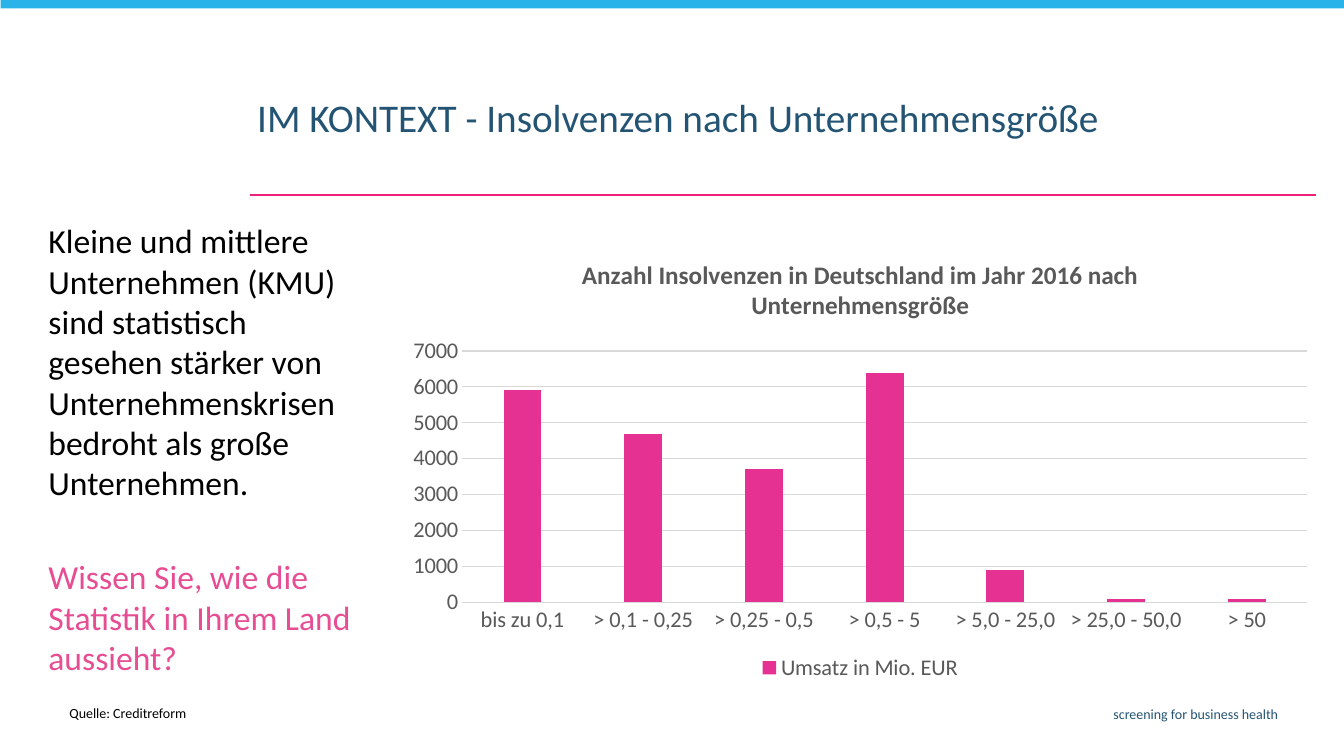
from pptx import Presentation
from pptx.chart.data import CategoryChartData as Data
from pptx.dml.color import RGBColor as Rgb
from pptx.enum.chart import XL_CHART_TYPE as Kind, XL_LEGEND_POSITION as Place
from pptx.enum.chart import XL_TICK_MARK as Tick
from pptx.enum.shapes import MSO_CONNECTOR as Wire, MSO_SHAPE as Form
from pptx.enum.text import MSO_ANCHOR as Anchor, MSO_AUTO_SIZE as Fit, PP_ALIGN as Align
from pptx.oxml.ns import qn
from pptx.util import Pt
from lxml.etree import SubElement as Sub

BLUE, SKY, PINK, GREY, PALE = "245473", "29B3E8", "E53292", "595959", "D9D9D9"
TITLE = "IM KONTEXT - Insolvenzen nach Unternehmensgröße"
THESIS = ("Kleine und mittlere Unternehmen (KMU) sind statistisch gesehen "
          "stärker von Unternehmenskrisen bedroht als große Unternehmen.")
QUERY = "Wissen Sie, wie die Statistik in Ihrem Land aussieht?"
HEAD = "Anzahl Insolvenzen in Deutschland im Jahr 2016 nach Unternehmensgröße"
COUNTS = {"bis zu 0,1": 5900, "> 0,1 - 0,25": 4700, "> 0,25 - 0,5": 3700,
          "> 0,5 - 5": 6400, "> 5,0 - 25,0": 900, "> 25,0 - 50,0": 100, "> 50": 100}


def hue(code):
    return Rgb.from_string(code)


def style(font, size, color, bold=False):
    font.name, font.size, font.bold = "Calibri", Pt(size), bold
    font.color.rgb = hue(color)


def write(frame, text, size=10, color="000000", bold=False, align=Align.LEFT,
          lead=None, before=0, more=False):
    para = frame.add_paragraph() if more else frame.paragraphs[0]
    run = para.add_run()
    run.text = text
    style(run.font, size, color, bold)
    para.alignment, para.space_before = align, Pt(before)
    if lead:
        para.line_spacing = lead


class Sheet:
    def __init__(self, deck):
        self.slide = deck.slides.add_slide(deck.slide_layouts[5])
        self.shapes = self.slide.shapes

    def setup(self, frame, inset, anchor=Anchor.TOP):
        frame.word_wrap, frame.auto_size = True, Fit.NONE
        frame.vertical_anchor = anchor
        frame.margin_left = frame.margin_right = Pt(inset)
        frame.margin_top = frame.margin_bottom = Pt(inset / 2)
        return frame

    def title(self, text, x, y, w, h):
        box = self.shapes.title
        box.left, box.top, box.width, box.height = map(Pt, (x, y, w, h))
        write(self.setup(box.text_frame, 7.2), text, size=28, color=BLUE, lead=0.9)

    def text(self, x, y, w, h, inset=6.6, anchor=Anchor.TOP):
        box = self.shapes.add_textbox(*map(Pt, (x, y, w, h)))
        return self.setup(box.text_frame, inset, anchor)

    def band(self, x, y, w, h, color):
        bar = self.shapes.add_shape(Form.RECTANGLE, *map(Pt, (x, y, w, h)))
        bar.shadow.inherit = False
        bar.fill.solid()
        bar.fill.fore_color.rgb = hue(color)
        bar.line.fill.background()

    def rule(self, x, y, end, color):
        line = self.shapes.add_connector(Wire.STRAIGHT, *map(Pt, (x, y, end, y)))
        line.line.color.rgb, line.line.width = hue(color), Pt(1.5)
        Sub(line._element.spPr, qn("a:effectLst"))

    def chart(self, x, y, w, h, head, name, counts):
        data = Data()
        data.categories = list(counts)
        data.add_series(name, list(counts.values()))
        spot = map(Pt, (x, y, w, h))
        chart = self.shapes.add_chart(Kind.COLUMN_CLUSTERED, *spot, data).chart
        style(chart.font, 16, GREY)
        chart.has_title = True
        write(chart.chart_title.text_frame, head, size=18, color=GREY, bold=True,
              align=Align.CENTER)
        chart.chart_title.include_in_layout = False
        chart.has_legend = True
        chart.legend.position = Place.BOTTOM
        chart.legend.include_in_layout = False
        style(chart.legend.font, 16, GREY)
        plot = chart.plots[0]
        plot.gap_width, plot.overlap, plot.vary_by_categories = 219, -27, False
        fill = plot.series[0].format.fill
        fill.solid()
        fill.fore_color.rgb = hue(PINK)
        cats, vals = chart.category_axis, chart.value_axis
        for axis in (cats, vals):
            axis.major_tick_mark = axis.minor_tick_mark = Tick.NONE
            style(axis.tick_labels.font, 16, GREY)
        vals.minimum_scale, vals.maximum_scale, vals.major_unit = 0, 7000, 1000
        vals.format.line.fill.background()
        for line in (cats.format.line, vals.major_gridlines.format.line):
            line.color.rgb, line.width = hue(PALE), Pt(0.75)


def main():
    deck = Presentation()
    deck.slide_width, deck.slide_height = Pt(960), Pt(540)
    sheet = Sheet(deck)
    sheet.rule(178.5, 139, 940, "EC2179")
    sheet.band(0.5, -1.5, 960, 7.5, SKY)
    sheet.title(TITLE, 176.5, 67, 645, 55)
    side = sheet.text(28, 154, 232, 328)
    write(side, THESIS, size=24)
    write(side, QUERY, size=24, color="E64D92", before=38.5, more=True)
    sheet.chart(282, 170, 665, 320, HEAD, "Umsatz in Mio. EUR", COUNTS)
    write(sheet.text(43, 497, 133, 21), "Quelle: Creditreform", lead=Pt(15))
    motto = sheet.text(263, 499.5, 657, 21, inset=7.2, anchor=Anchor.MIDDLE)
    write(motto, "screening for business health", color=BLUE, align=Align.RIGHT)
    deck.save("out.pptx")


if __name__ == "__main__":
    main()
